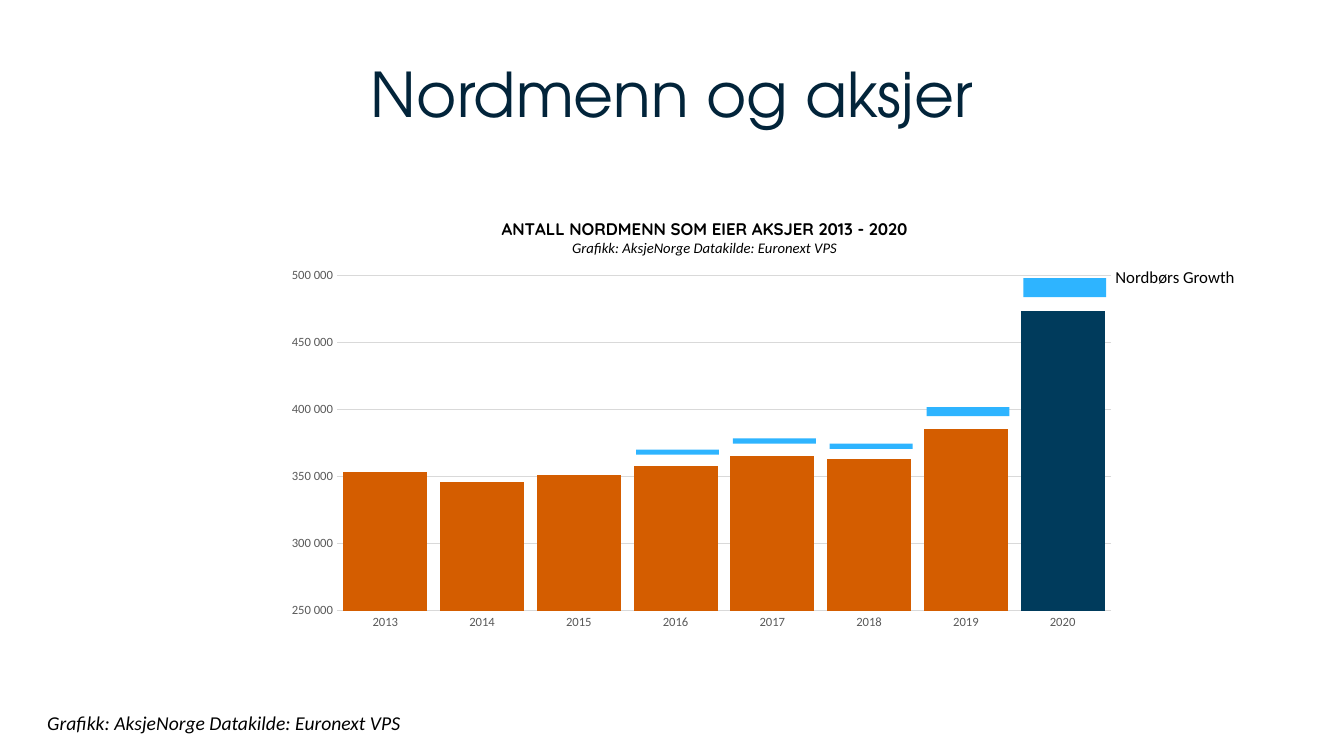
from lxml import etree
from pptx import Presentation
from pptx.chart.data import CategoryChartData
from pptx.dml.color import RGBColor
from pptx.enum.chart import XL_CHART_TYPE, XL_TICK_MARK
from pptx.enum.shapes import MSO_SHAPE
from pptx.enum.text import MSO_ANCHOR, PP_ALIGN
from pptx.oxml.ns import qn
from pptx.util import Cm, Pt

COLUMNS = XL_CHART_TYPE.COLUMN_CLUSTERED
NO_TICK = XL_TICK_MARK.NONE
RECT = MSO_SHAPE.RECTANGLE
TOP, MIDDLE = MSO_ANCHOR.TOP, MSO_ANCHOR.MIDDLE
LEFT, CENTER = PP_ALIGN.LEFT, PP_ALIGN.CENTER

NAVY, ORANGE, BLUE, INK = "003B5C", "D45D00", "2EB4FF", "02243A"
BLACK, GRAY, RULE = "000000", "595959", "D9D9D9"
BODY, HEADING, CHART_HEAD = "Calibri", "TeX Gyre Adventor", "Quicksand"

YEARS = [str(year) for year in range(2013, 2021)]
OWNERS = [353000, 346000, 351000, 358000, 365000, 363000, 385000, 473000]
CREDIT = ("Grafikk: AksjeNorge", "Datakilde: Euronext VPS")
GROWTH_LEFT, GROWTH_PITCH, GROWTH_WIDTH = 16.03, 2.44, 2.09
GROWTH_BARS = [(11.33, 0.13), (11.05, 0.13), (11.18, 0.13), (10.26, 0.23), (7.01, 0.48)]


def rgb(color):
    return RGBColor.from_string(color)


def set_font(font, size, color=BLACK, name=BODY, **extra):
    for key, value in dict(size=Pt(size), name=name, **extra).items():
        setattr(font, key, value)
    font.color.rgb = rgb(color)


def set_layout(parent, **places):
    layout = parent.find(qn("c:layout"))
    if layout is None:
        layout = etree.Element(qn("c:layout"))
        parent.insert(0, layout)
    manual = etree.SubElement(layout, qn("c:manualLayout"))
    for tag, value in places.items():
        etree.SubElement(manual, qn(f"c:{tag}"), val=str(value))


class Deck:
    def __init__(self, width, height):
        self.prs = Presentation()
        self.prs.slide_width, self.prs.slide_height = Cm(width), Cm(height)
        self.slide = self.prs.slides.add_slide(self.prs.slide_layouts[6])

    def text(self, box, text, size, align=LEFT, anchor=TOP, level=0, **font):
        tf = self.slide.shapes.add_textbox(*map(Cm, box)).text_frame
        tf.word_wrap, tf.vertical_anchor = True, anchor
        p = tf.paragraphs[0]
        p.alignment, p.level = align, level
        r = p.add_run()
        r.text = text
        set_font(r.font, size, **font)

    def bar(self, box, color):
        sp = self.slide.shapes.add_shape(RECT, *map(Cm, box))
        sp.shadow.inherit = False
        sp.fill.solid()
        sp.fill.fore_color.rgb = rgb(color)
        sp.line.fill.background()

    def chart(self, box, categories, values, highlight):
        data = CategoryChartData()
        data.categories = categories
        data.add_series("Series 1", values)
        chart = self.slide.shapes.add_chart(COLUMNS, *map(Cm, box), data).chart
        chart.has_legend = False
        set_font(chart.font, 10)
        plot = chart.plots[0]
        for key, value in dict(gap_width=15, overlap=-27, vary_by_categories=False).items():
            setattr(plot, key, value)
        series = plot.series[0]
        for column, color in ((series, ORANGE), (series.points[highlight], NAVY)):
            column.format.fill.solid()
            column.format.fill.fore_color.rgb = rgb(color)
        self.axes(chart)
        return chart

    def axes(self, chart):
        cat, val = chart.category_axis, chart.value_axis
        for axis in (cat, val):
            axis.major_tick_mark = axis.minor_tick_mark = NO_TICK
            set_font(axis.tick_labels.font, 9, GRAY)
        for key, value in dict(minimum_scale=250000, maximum_scale=500000, major_unit=50000).items():
            setattr(val, key, value)
        val.tick_labels.number_format = r"#\ ###"
        val.tick_labels.number_format_is_linked = False
        val.format.line.fill.background()
        for line in (cat.format.line, val.major_gridlines.format.line):
            line.color.rgb = rgb(RULE)
            line.width = Pt(0.75)

    def chart_title(self, chart, title, credit):
        tf = chart.chart_title.text_frame
        lines = (
            (tf.paragraphs[0], title, dict(size=12, name=CHART_HEAD, bold=True)),
            (tf.add_paragraph(), credit, dict(size=10.5, bold=False, italic=True)),
        )
        for p, text, font in lines:
            p.alignment = CENTER
            r = p.add_run()
            r.text = text
            set_font(r.font, **font)


def main():
    deck = Deck(33.87, 19.05)
    deck.text((1.7, 0.76, 30.48, 3.18), "Nordmenn og aksjer", 44, CENTER, MIDDLE,
              color=INK, name=HEADING)
    chart = deck.chart((6.99, 4.93, 21.44, 11.13), YEARS, OWNERS, YEARS.index("2020"))
    deck.chart_title(chart, "ANTALL NORDMENN SOM EIER AKSJER 2013 - 2020", " ".join(CREDIT))
    root = chart.element
    set_layout(root.find(f".//{qn('c:title')}"), xMode="edge", yMode="edge", x=0.26, y=0.04)
    set_layout(root.find(f".//{qn('c:plotArea')}"), layoutTarget="inner", xMode="edge",
               yMode="edge", x=0.07, y=0.18, w=0.91, h=0.76)
    for i, (top, height) in enumerate(GROWTH_BARS):
        deck.bar((GROWTH_LEFT + i * GROWTH_PITCH, top, GROWTH_WIDTH, height), BLUE)
    deck.text((27.86, 6.6, 4.14, 0.77), "Nordbørs Growth", 12)
    deck.text((-0.33, 17.78, 16.94, 0.86), " ".join(CREDIT), 14, level=1, italic=True)
    deck.prs.save("out.pptx")


if __name__ == "__main__":
    main()
